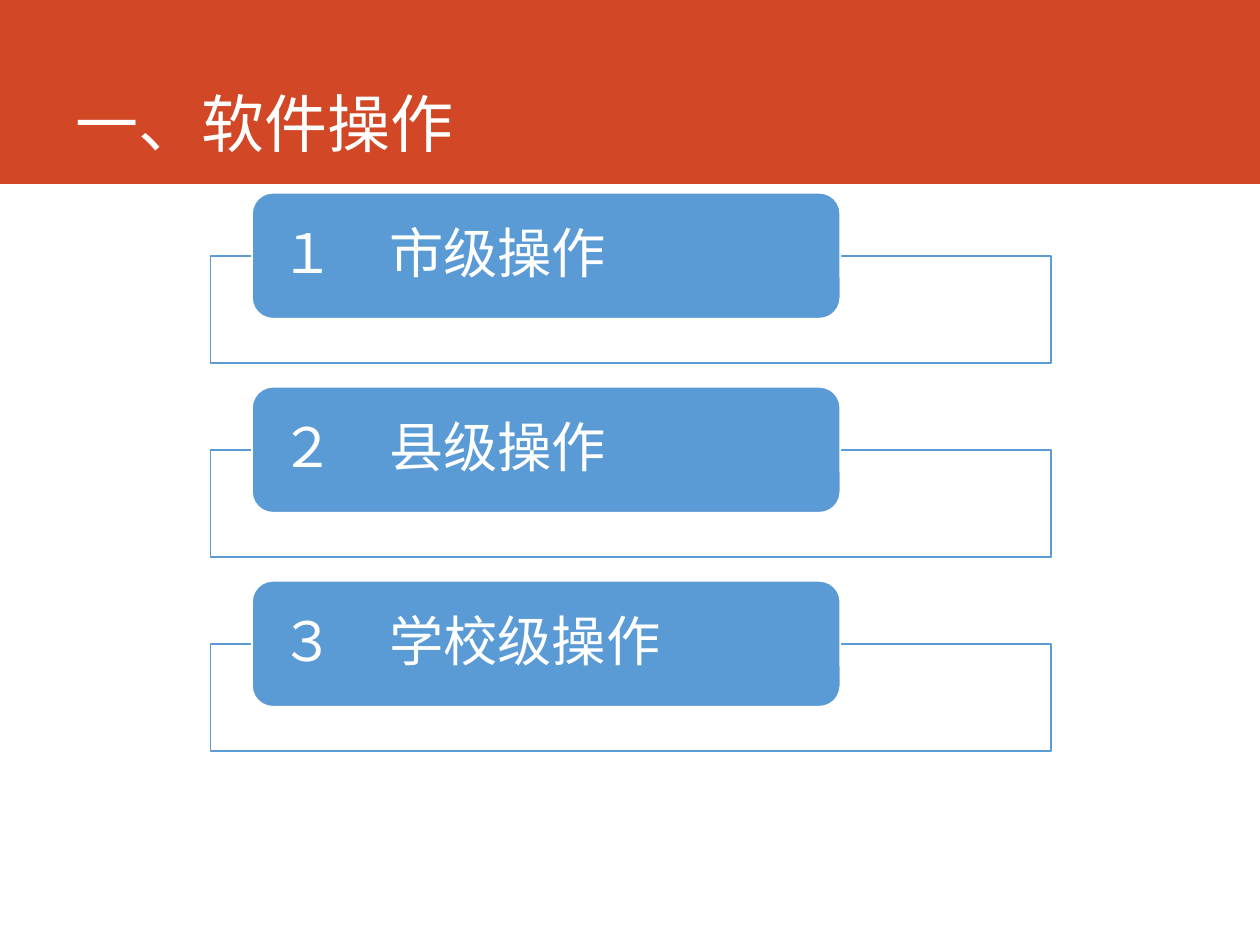
from dataclasses import dataclass

from lxml.etree import SubElement
from pptx import Presentation
from pptx.dml.color import RGBColor
from pptx.enum.shapes import MSO_SHAPE
from pptx.enum.text import MSO_ANCHOR, MSO_AUTO_SIZE, PP_ALIGN
from pptx.oxml.ns import qn
from pptx.util import Inches, Pt

COLORS = {"band": "D24726", "blue": "5B9BD5", "white": "FFFFFF"}
CJK_FONT = "Noto Sans CJK SC"
LABEL_FONT = "Karla"
FIRST_TOP = 1.53
PITCH = 1.54


@dataclass
class Step:
    number: str
    name: str


STEPS = [
    Step("１", "市级操作"),
    Step("２", "县级操作"),
    Step("３", "学校级操作"),
]


def color(name: str) -> RGBColor:
    return RGBColor.from_string(COLORS[name])


def add_box(s, kind, left: float, top: float, width: float, height: float,
            fill: str, line: str | None = None):
    sp = s.shapes.add_shape(kind, Inches(left), Inches(top),
                            Inches(width), Inches(height))
    sp.shadow.inherit = False
    sp.fill.solid()
    sp.fill.fore_color.rgb = color(fill)
    if line:
        sp.line.color.rgb = color(line)
        sp.line.width = Pt(1)
    else:
        sp.line.fill.background()
    return sp


def add_run(p, text: str, size: int, font: str) -> None:
    r = p.add_run()
    r.text = text
    r.font.size = Pt(size)
    r.font.name = font
    r.font.color.rgb = color("white")
    SubElement(r.font._element, qn("a:ea"), typeface=CJK_FONT)


def add_title(s, text: str) -> None:
    title = s.shapes.title
    title.left, title.top = Inches(0.5), Inches(0)
    title.width, title.height = Inches(8.82), Inches(1.32)
    band = add_box(s, MSO_SHAPE.RECTANGLE, 0, 0, 10, 1.46, "band")
    title.element.addprevious(band.element)
    tf = title.text_frame
    tf.auto_size = MSO_AUTO_SIZE.NONE
    tf.vertical_anchor = MSO_ANCHOR.BOTTOM
    p = tf.paragraphs[0]
    p.alignment = PP_ALIGN.LEFT
    add_run(p, text, 36, CJK_FONT)


def add_step(s, step: Step, top: float) -> None:
    """Draw an outlined frame with a rounded label over its top edge."""
    frame = add_box(s, MSO_SHAPE.RECTANGLE, 1.67, top + 0.5, 6.67, 0.85,
                    "white", "blue")
    fill_color = frame.element.spPr.find(qn("a:solidFill"))[0]
    SubElement(fill_color, qn("a:alpha"), val="90000")

    label = add_box(s, MSO_SHAPE.ROUNDED_RECTANGLE, 2, top, 4.67, 1,
                    "blue", "white")
    tf = label.text_frame
    tf.word_wrap = True
    tf.vertical_anchor = MSO_ANCHOR.MIDDLE
    tf.margin_left = tf.margin_right = Inches(0.18)
    tf.margin_top = tf.margin_bottom = Inches(0)
    p = tf.paragraphs[0]
    p.alignment = PP_ALIGN.LEFT
    p.line_spacing = 0.9
    p.space_after = Pt(11)
    add_run(p, f"{step.number}　{step.name}", 31, LABEL_FONT)


def main() -> None:
    prs = Presentation()
    prs.slide_width, prs.slide_height = Inches(10), Inches(7.5)
    s = prs.slides.add_slide(prs.slide_layouts[5])
    add_title(s, "一、软件操作")
    for i, step in enumerate(STEPS):
        add_step(s, step, FIRST_TOP + i * PITCH)
    prs.save("out.pptx")


if __name__ == "__main__":
    main()
